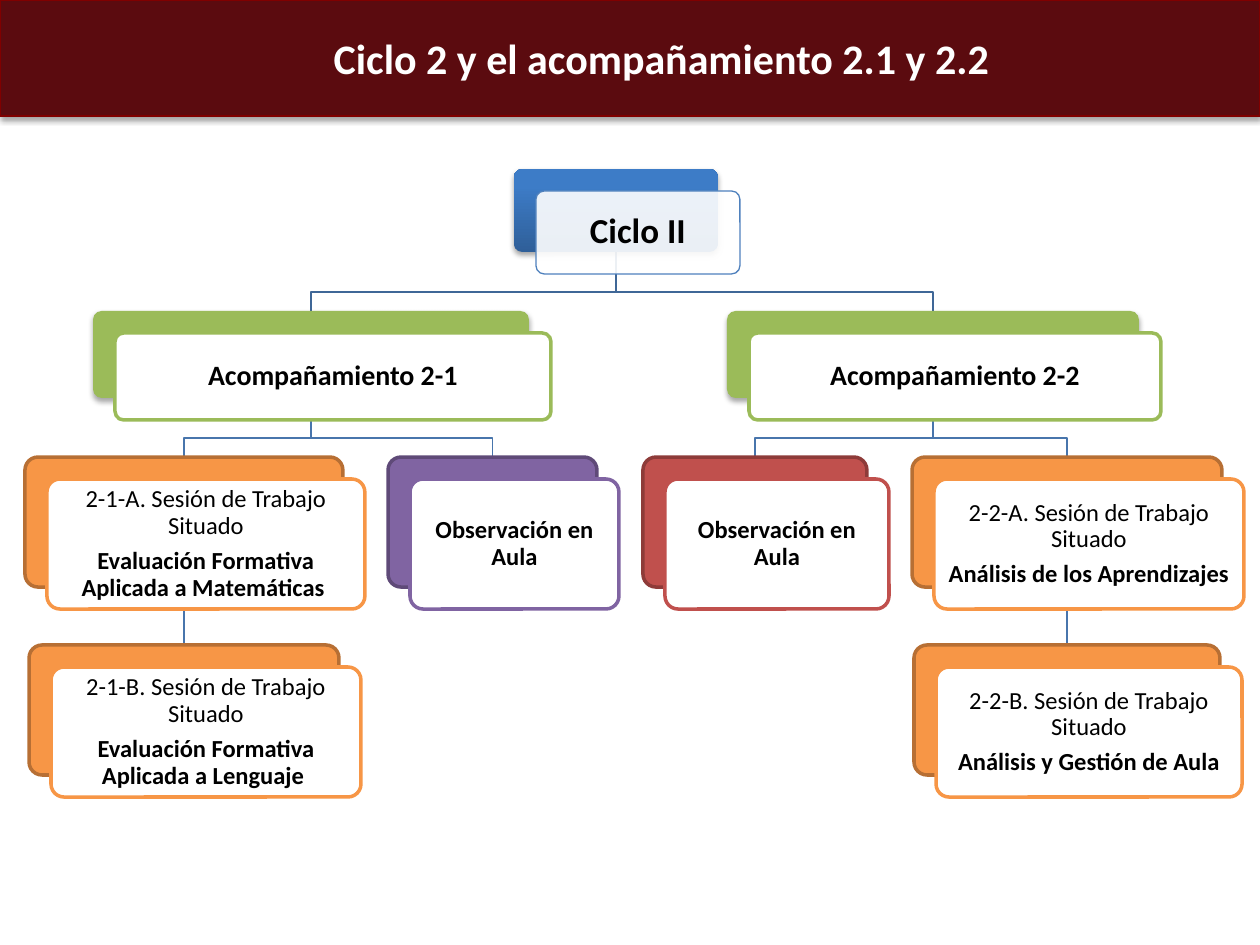
import pptx
import pptx.dml.color
import pptx.enum.shapes
import pptx.enum.text
import pptx.oxml
import pptx.oxml.ns
import pptx.util

SCALE = 914400 / 126
OFFSET = 22
FONT = "Calibri"
GREEN, ORANGE, PURPLE, RED = "9BBB59", "F79646", "8064A2", "C0504D"
DARK_ORANGE, DARK_PURPLE, DARK_RED = "B76F34", "5F4A78", "8E3B39"
ROOT_LINK, BRANCH_LINK = "3F6797", "4875AC"
NAMESPACE = pptx.oxml.ns.nsdecls("a")
SHADOW = (
    f'<a:effectLst {NAMESPACE}><a:outerShdw blurRad="39370" dist="22860" dir="5400000" rotWithShape="0">'
    '<a:srgbClr val="000000"><a:alpha val="35000"/></a:srgbClr></a:outerShdw></a:effectLst>'
)


def px(value):
    return pptx.util.Emu(round(value * SCALE))


def color(value):
    return pptx.dml.color.RGBColor.from_string(value)


def set_line(shape, line_color, width):
    if line_color is None:
        shape.line.fill.background()
    else:
        shape.line.color.rgb = color(line_color)
        shape.line.width = pptx.util.Pt(width)


def add_box(slide, kind, box, fill, line_color=None, width=2, shadow=False):
    shape = slide.shapes.add_shape(kind, *map(px, box))
    shape.fill.solid()
    shape.fill.fore_color.rgb = color(fill)
    set_line(shape, line_color, width)
    shape.shadow.inherit = False
    if shadow:
        properties = shape._element.spPr
        properties.remove(properties.find(pptx.oxml.ns.qn("a:effectLst")))
        properties.append(pptx.oxml.parse_xml(SHADOW))
    return shape


def add_rounded(slide, box, *style, **options):
    kind = pptx.enum.shapes.MSO_SHAPE.ROUNDED_RECTANGLE
    shape = add_box(slide, kind, box, *style, **options)
    shape.adjustments[0] = 0.1
    return shape


def write_text(shape, lines, size, text_color, inset, spacing=0.9):
    frame = shape.text_frame
    frame.word_wrap = True
    frame.vertical_anchor = pptx.enum.text.MSO_ANCHOR.MIDDLE
    frame.margin_left = frame.margin_right = px(inset)
    frame.margin_top = frame.margin_bottom = px(inset)
    for index, (text, bold) in enumerate(lines):
        paragraph = frame.add_paragraph() if index else frame.paragraphs[0]
        paragraph.alignment = pptx.enum.text.PP_ALIGN.CENTER
        paragraph.line_spacing = spacing
        if index:
            paragraph.space_before = pptx.util.Pt(5)
        run = paragraph.add_run()
        run.text = text
        run.font.name = FONT
        run.font.size = pptx.util.Pt(size)
        run.font.bold = bold
        run.font.color.rgb = color(text_color)


def add_title(slide, box, text):
    kind = pptx.enum.shapes.MSO_SHAPE.RECTANGLE
    shape = add_box(slide, kind, box, "5B0B0F", "800000", 0.75, shadow=True)
    write_text(shape, [(text, True)], 24, "FFFFFF", 12, 1.0)
    shape.text_frame.margin_left = px(75)


def add_card(slide, box, lines, size, fill, border, front_width=2):
    left, top, width, height = box
    rear = add_rounded(slide, box, fill, border, shadow=border is None)
    front_box = (left + OFFSET, top + OFFSET, width, height)
    front = add_rounded(slide, front_box, "FFFFFF", fill, front_width)
    write_text(front, lines, size, "000000", 7)
    return rear, front


def add_root(slide, box, text):
    rear, front = add_card(slide, box, [(text, True)], 20, "4F81BD", None, 0.75)
    rear.fill.gradient()
    rear.fill.gradient_angle = 90
    for stop, (position, value) in zip(rear.fill.gradient_stops, ((0, "2F5F99"), (0.8, "3D7CC7"))):
        stop.position = position
        stop.color.rgb = color(value)
    fill_color = front._element.spPr.find(".//" + pptx.oxml.ns.qn("a:srgbClr"))
    fill_color.append(pptx.oxml.parse_xml(f'<a:alpha {NAMESPACE} val="90000"/>'))
    return rear


def send_to_back(shape):
    shape._element.getparent().insert(2, shape._element)


def add_elbow(slide, parent, child, line_color):
    start_x = parent.left + parent.width // 2
    end_x = child.left + child.width // 2
    bend_y = child.top - px(19)
    builder = slide.shapes.build_freeform(start_x, parent.top + parent.height)
    builder.add_line_segments([(start_x, bend_y), (end_x, bend_y), (end_x, child.top)], close=False)
    elbow = builder.convert_to_shape()
    elbow.fill.background()
    set_line(elbow, line_color, 0.75)
    elbow.shadow.inherit = False
    send_to_back(elbow)


def add_straight(slide, parent, child):
    kind = pptx.enum.shapes.MSO_CONNECTOR.STRAIGHT
    connector = slide.shapes.add_connector(kind, 0, 0, 0, 0)
    connector.begin_connect(parent, 2)
    connector.end_connect(child, 0)
    set_line(connector, BRANCH_LINK, 0.75)
    connector._element.spPr.append(pptx.oxml.parse_xml(f"<a:effectLst {NAMESPACE}/>"))
    send_to_back(connector)


def add_branch(slide, root, box, title, leaves, follow_up):
    branch, _ = add_card(slide, box, [(title, True)], 16, GREEN, None)
    add_elbow(slide, root, branch, ROOT_LINK)
    top = box[1]
    for left, width, lines, fill, border in leaves:
        leaf, _ = add_card(slide, (left, top + 146, width, 130), lines, 14, fill, border)
        add_elbow(slide, branch, leaf, BRANCH_LINK)
        if fill == ORANGE:
            session = leaf
    left, width, lines = follow_up
    second, _ = add_card(slide, (left, top + 334, width, 130), lines, 14, ORANGE, DARK_ORANGE)
    add_straight(slide, session, second)


def session_lines(code, topic):
    return [(f"{code}. Sesión de Trabajo Situado", False), (topic, True)]


def main():
    presentation = pptx.Presentation()
    presentation.slide_width, presentation.slide_height = px(1260), px(945)
    slide = presentation.slides.add_slide(presentation.slide_layouts[6])
    observation = [("Observación en Aula", True)]

    add_title(slide, (0, 0, 1260, 116), "Ciclo 2 y el acompañamiento 2.1 y 2.2")
    root = add_root(slide, (514, 169, 204, 83), "Ciclo II")
    add_branch(
        slide, root, (93, 311, 436, 87), "Acompañamiento 2-1",
        [
            (25, 318, session_lines("2-1-A", "Evaluación Formativa Aplicada a Matemáticas "), ORANGE, DARK_ORANGE),
            (388, 209, observation, PURPLE, DARK_PURPLE),
        ],
        (29, 310, session_lines("2-1-B", "Evaluación Formativa Aplicada a Lenguaje ")),
    )
    add_branch(
        slide, root, (727, 311, 412, 87), "Acompañamiento 2-2",
        [
            (643, 224, observation, RED, DARK_RED),
            (912, 310, session_lines("2-2-A", "Análisis de los Aprendizajes"), ORANGE, DARK_ORANGE),
        ],
        (914, 306, session_lines("2-2-B", "Análisis y Gestión de Aula")),
    )
    presentation.save("out.pptx")


if __name__ == "__main__":
    main()
